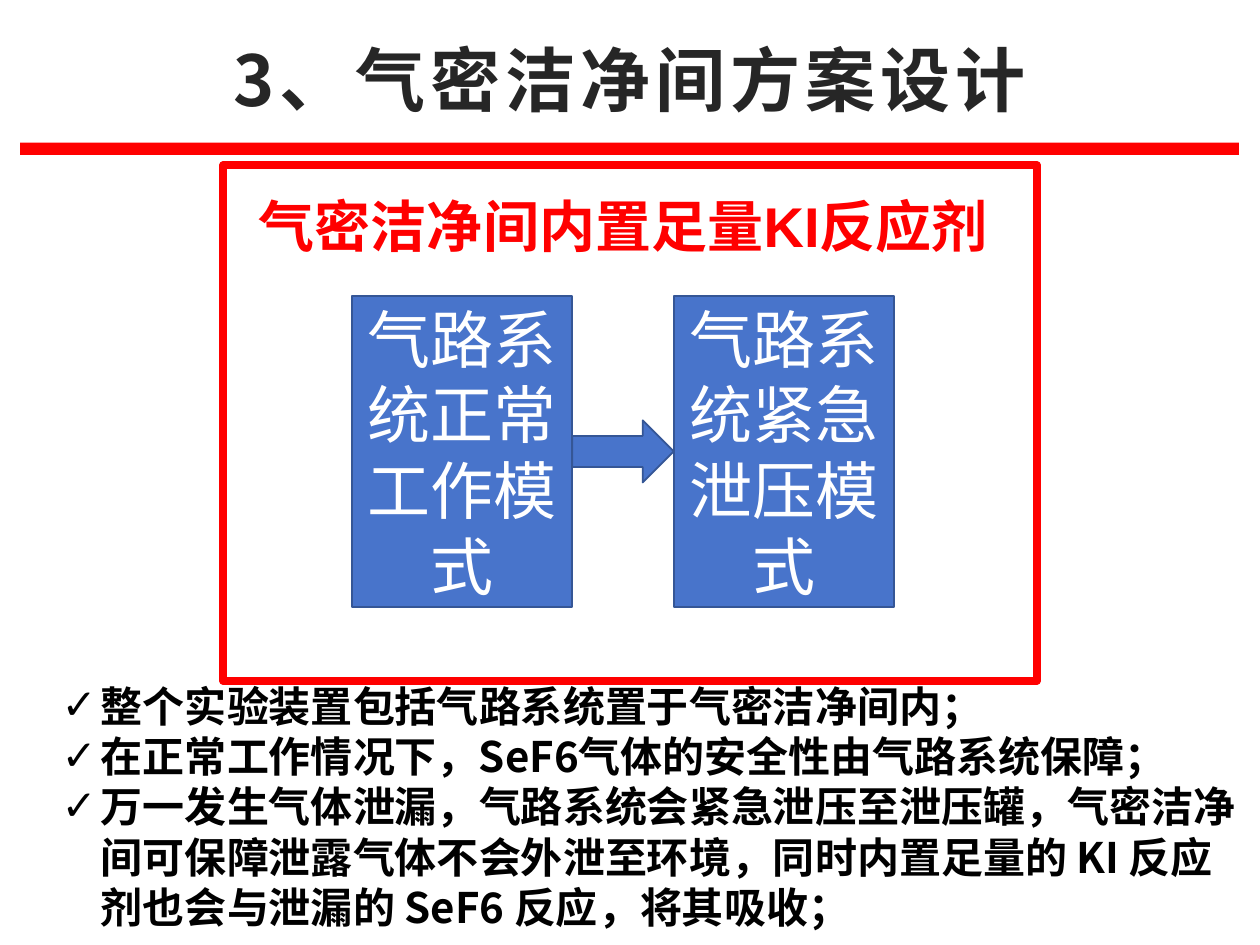
from pptx import Presentation
from pptx.dml.color import RGBColor
from pptx.enum.shapes import MSO_SHAPE
from pptx.enum.text import MSO_ANCHOR, MSO_AUTO_SIZE, PP_ALIGN
from pptx.oxml.ns import qn
from pptx.util import Pt
from lxml.etree import SubElement

TITLE = "3、气密洁净间方案设计"
ROOM_LABEL = "气密洁净间内置足量KI反应剂"
MODES = ["气路系统正常工作模式", "气路系统紧急泄压模式"]
POINTS = [
    "整个实验装置包括气路系统置于气密洁净间内；",
    "在正常工作情况下，SeF6气体的安全性由气路系统保障；",
    "万一发生气体泄漏，气路系统会紧急泄压至泄压罐，气密洁净间可保障泄露气体不会外泄至环境，"
    "同时内置足量的 KI 反应剂也会与泄漏的 SeF6 反应，将其吸收；",
]
COLORS = {"red": "FF0000", "blue": "4874CB", "edge": "355696",
          "title": "262626", "text": "000000", "white": "FFFFFF"}
CJK_FONT = "Noto Sans CJK SC"
LATIN_FONT = "Arial"

MODE_LEFT, MODE_TOP, MODE_WIDTH, MODE_HEIGHT = 201, 169, 126, 178
ARROW_WIDTH, ARROW_HEIGHT = 58, 35.5
BULLET_INDENT = 22.5


def color(name):
    return RGBColor.from_string(COLORS[name])


def place(part, left, top, width, height):
    part.left, part.top = Pt(left), Pt(top)
    part.width, part.height = Pt(width), Pt(height)


def add_part(kind, box, fill=None, line=None, line_width=1):
    part = slide.shapes.add_shape(kind, *map(Pt, box))
    part.shadow.inherit = False
    if fill:
        part.fill.solid()
        part.fill.fore_color.rgb = color(fill)
    else:
        part.fill.background()
    if line:
        part.line.color.rgb = color(line)
        part.line.width = Pt(line_width)
    else:
        part.line.fill.background()
    return part


def write(part, texts, size, font, tint, bold=False, align=PP_ALIGN.CENTER,
          anchor=MSO_ANCHOR.MIDDLE):
    frame = part.text_frame
    frame.word_wrap = True
    frame.auto_size = MSO_AUTO_SIZE.NONE
    frame.vertical_anchor = anchor
    for index, text in enumerate(texts):
        paragraph = frame.add_paragraph() if index else frame.paragraphs[0]
        paragraph.alignment = align
        paragraph.space_before = paragraph.space_after = Pt(0)
        run = paragraph.add_run()
        run.text = text
        run.font.size = Pt(size)
        run.font.name = font
        run.font.bold = bold
        run.font.color.rgb = color(tint)
        SubElement(run.font._element, qn("a:ea")).set("typeface", CJK_FONT)
    return frame.paragraphs


presentation = Presentation()
presentation.slide_width, presentation.slide_height = Pt(720), Pt(540)
slide = presentation.slides.add_slide(presentation.slide_layouts[1])
title, points = slide.placeholders

add_part(MSO_SHAPE.RECTANGLE, (11.5, 81.5, 696.5, 7), fill="red")

place(title, 0, 0, 720, 90)
heading = write(title, [TITLE], 40, CJK_FONT, "title", bold=True)[0]
heading.runs[0].font._element.set("spc", "300")

mode_step = MODE_WIDTH + ARROW_WIDTH
for index, mode in enumerate(MODES):
    box = (MODE_LEFT + index * mode_step, MODE_TOP, MODE_WIDTH, MODE_HEIGHT)
    process = add_part(MSO_SHAPE.FLOWCHART_PROCESS, box, "blue", "edge")
    write(process, [mode], 36, LATIN_FONT, "white")

arrow_top = MODE_TOP + (MODE_HEIGHT - ARROW_HEIGHT) / 2
add_part(MSO_SHAPE.RIGHT_ARROW,
         (MODE_LEFT + MODE_WIDTH, arrow_top, ARROW_WIDTH, ARROW_HEIGHT), "blue", "edge")

room_label = slide.shapes.add_textbox(Pt(136), Pt(106), Pt(440.5), Pt(45.5))
write(room_label, [ROOM_LABEL], 32, LATIN_FONT, "red", bold=True, anchor=MSO_ANCHOR.TOP)
add_part(MSO_SHAPE.RECTANGLE, (127.5, 94.5, 465, 294.5), line="red", line_width=4.5)

place(points, 28, 385, 685, 137.5)
for point in write(points, POINTS, 24, CJK_FONT, "text", bold=True,
                   align=PP_ALIGN.LEFT, anchor=MSO_ANCHOR.TOP):
    properties = point._p.get_or_add_pPr()
    properties.set("marL", str(Pt(BULLET_INDENT)))
    properties.set("indent", str(-Pt(BULLET_INDENT)))
    SubElement(properties, qn("a:buFont")).set("typeface", LATIN_FONT)
    SubElement(properties, qn("a:buChar")).set("char", "✓")

presentation.save("out.pptx")
